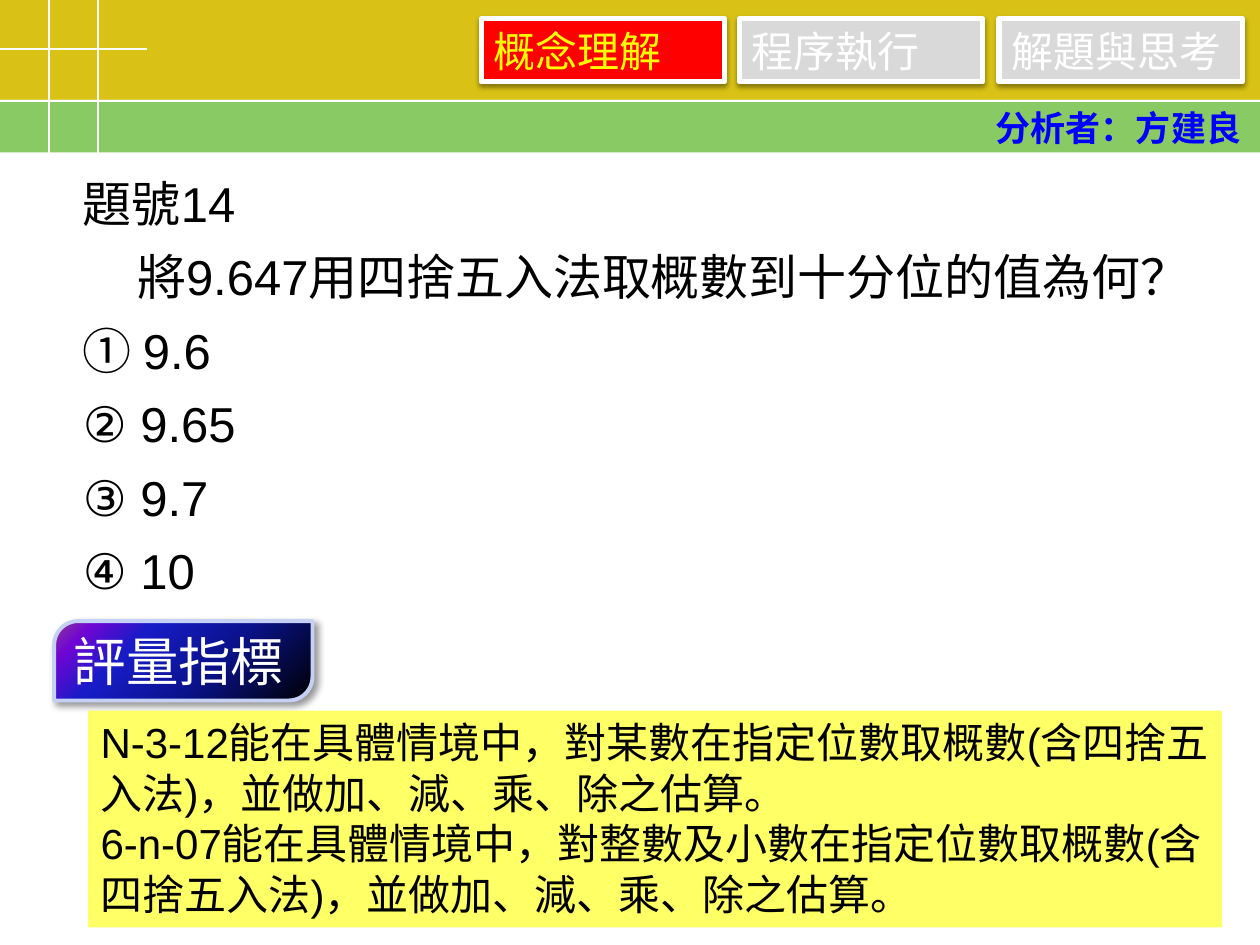
from lxml import etree
from pptx import Presentation
from pptx.dml.color import RGBColor
from pptx.enum.shapes import MSO_CONNECTOR, MSO_SHAPE
from pptx.enum.text import MSO_ANCHOR, PP_ALIGN
from pptx.oxml.ns import qn
from pptx.util import Inches, Pt

RECTANGLE = MSO_SHAPE.RECTANGLE
ROUND_DIAGONAL = MSO_SHAPE.ROUND_2_DIAG_RECTANGLE
STRAIGHT = MSO_CONNECTOR.STRAIGHT
TOP, MIDDLE = MSO_ANCHOR.TOP, MSO_ANCHOR.MIDDLE
LEFT, RIGHT, JUSTIFY = PP_ALIGN.LEFT, PP_ALIGN.RIGHT, PP_ALIGN.JUSTIFY

WHITE = RGBColor(0xFF, 0xFF, 0xFF)
BLACK = RGBColor(0, 0, 0)
GOLD = RGBColor(0xD9, 0xC2, 0x15)
GREEN = RGBColor(0x89, 0xCA, 0x64)
RED = RGBColor(0xFF, 0, 0)
YELLOW = RGBColor(0xFF, 0xFF, 0)
GRAY = RGBColor(0xD9, 0xD9, 0xD9)
BLUE = RGBColor(0, 0, 0xFF)
PALE_BLUE = RGBColor(0xC4, 0xD0, 0xF4)
PALE_YELLOW = RGBColor(0xFF, 0xFF, 0x66)
BADGE_STOPS = [
    (0, BLACK),
    (40, RGBColor(0x0A, 0x12, 0x8C)),
    (70, RGBColor(0x18, 0x1C, 0xC7)),
    (88, RGBColor(0x70, 0x05, 0xD4)),
    (100, RGBColor(0x8C, 0x3D, 0x91)),
]

LATIN_FONT = "Arial"
CHINESE_FONT = "Noto Sans CJK JP"


def write_text(shape, paragraphs, size, color=BLACK, font=LATIN_FONT, bold=False,
               align=LEFT, anchor=TOP, line_spacing=None, inset=0.05, indents=()):
    frame = shape.text_frame
    frame.word_wrap = True
    frame.vertical_anchor = anchor
    frame.margin_top = frame.margin_bottom = Inches(inset)
    for index, text in enumerate(paragraphs):
        paragraph = frame.add_paragraph() if index else frame.paragraphs[0]
        paragraph.text = text
        paragraph.alignment = align
        if line_spacing:
            paragraph.line_spacing = Pt(line_spacing)
        if index < len(indents):
            paragraph._p.get_or_add_pPr().set("indent", str(Inches(indents[index])))
        for run in paragraph.runs:
            run.font.size = Pt(size)
            run.font.bold = bold
            run.font.color.rgb = color
            run.font.name = font
            etree.SubElement(run.font._element, qn("a:ea"), typeface=CHINESE_FONT)


class SlideBuilder:
    def __init__(self, slide):
        self.slide = slide

    def box(self, left, top, width, height, fill=None, line=None, line_width=1,
            kind=RECTANGLE):
        shape = self.slide.shapes.add_shape(
            kind, Inches(left), Inches(top), Inches(width), Inches(height))
        shape.shadow.inherit = False
        if fill is not None:
            shape.fill.solid()
            shape.fill.fore_color.rgb = fill
        if line is None:
            shape.line.fill.background()
        else:
            shape.line.color.rgb = line
            shape.line.width = Pt(line_width)
        return shape

    def text_box(self, left, top, width, height):
        return self.slide.shapes.add_textbox(
            Inches(left), Inches(top), Inches(width), Inches(height))

    def rule(self, start_x, start_y, end_x, end_y):
        connector = self.slide.shapes.add_connector(
            STRAIGHT, Inches(start_x), Inches(start_y), Inches(end_x), Inches(end_y))
        connector.line.color.rgb = WHITE
        connector.line.width = Pt(1)
        etree.SubElement(connector._element.spPr, qn("a:effectLst"))

    def add_shadow(self, shape, opacity, blur, distance, angle):
        effects = shape._element.spPr.find(qn("a:effectLst"))
        shadow = etree.SubElement(
            effects, qn("a:outerShdw"), blurRad=str(Pt(blur)), dist=str(Pt(distance)),
            dir=str(angle * 60000), algn="tl", rotWithShape="0")
        color = etree.SubElement(shadow, qn("a:srgbClr"), val=str(BLACK))
        etree.SubElement(color, qn("a:alpha"), val=str(opacity * 1000))

    def add_gradient(self, shape, stops, angle):
        shape.fill.gradient()
        shape.fill.gradient_angle = angle
        stop_list = shape._element.spPr.find(qn("a:gradFill")).find(qn("a:gsLst"))
        for stop in list(stop_list):
            stop_list.remove(stop)
        for position, color in stops:
            stop = etree.SubElement(stop_list, qn("a:gs"), pos=str(position * 1000))
            etree.SubElement(stop, qn("a:srgbClr"), val=str(color))

    def tab(self, left, text, fill, color):
        shape = self.box(left, 0.15, 1.93, 0.5, fill, WHITE, 3)
        self.add_shadow(shape, 38, 3.1, 1.6, 90)
        write_text(shape, [text], 24, color, font=CHINESE_FONT, align=JUSTIFY,
                   anchor=MIDDLE)

    def badge(self, left, top, width, height, text):
        shape = self.box(left, top, width, height, line=PALE_BLUE, line_width=2.25,
                         kind=ROUND_DIAGONAL)
        shape.adjustments[0] = 0.3
        shape.adjustments[1] = 0
        self.add_gradient(shape, BADGE_STOPS, 135)
        self.add_shadow(shape, 40, 4, 3, 45)
        write_text(shape, [text], 30, WHITE, align=JUSTIFY, anchor=MIDDLE, inset=0)


def main():
    presentation = Presentation()
    presentation.slide_width = Inches(10)
    presentation.slide_height = Inches(7.5)
    builder = SlideBuilder(presentation.slides.add_slide(presentation.slide_layouts[6]))

    builder.box(0, 0.79, 10, 0.42, GREEN)
    builder.box(0, 0, 10, 0.79, GOLD)
    for x in (0.39, 0.78):
        builder.rule(x, 0, x, 1.24)
    for y, end_x in ((0.39, 1.17), (0.8, 10)):
        builder.rule(0, y, end_x, y)

    builder.badge(0.43, 4.93, 2.05, 0.63, "評量指標")

    for left, text, fill, color in (
        (3.82, "概念理解", RED, YELLOW),
        (5.87, "程序執行", GRAY, WHITE),
        (7.93, "解題與思考", GRAY, WHITE),
    ):
        builder.tab(left, text, fill, color)

    analyst = builder.text_box(7.61, 0.8, 2.34, 0.44)
    write_text(analyst, ["分析者：方建良"], 20, BLUE, bold=True, align=RIGHT)

    question_lines = ["將9.647用四捨五入法取概數到十分位的值為何？",
                      "① 9.6", "② 9.65", "③ 9.7", "④ 10"]
    question = builder.text_box(0.56, 1.21, 9.29, 3.58)
    write_text(question, ["題號14", "\n".join(question_lines)], 28,
               line_spacing=42, indents=(0, 0.43))

    indicators = builder.box(0.7, 5.64, 9, 1.72, PALE_YELLOW)
    write_text(indicators, [
        "N-3-12能在具體情境中，對某數在指定位數取概數(含四捨五入法)，並做加、減、乘、除之估算。",
        "6-n-07能在具體情境中，對整數及小數在指定位數取概數(含四捨五入法)，並做加、減、乘、除之估算。",
    ], 24)

    presentation.save("out.pptx")


if __name__ == "__main__":
    main()
